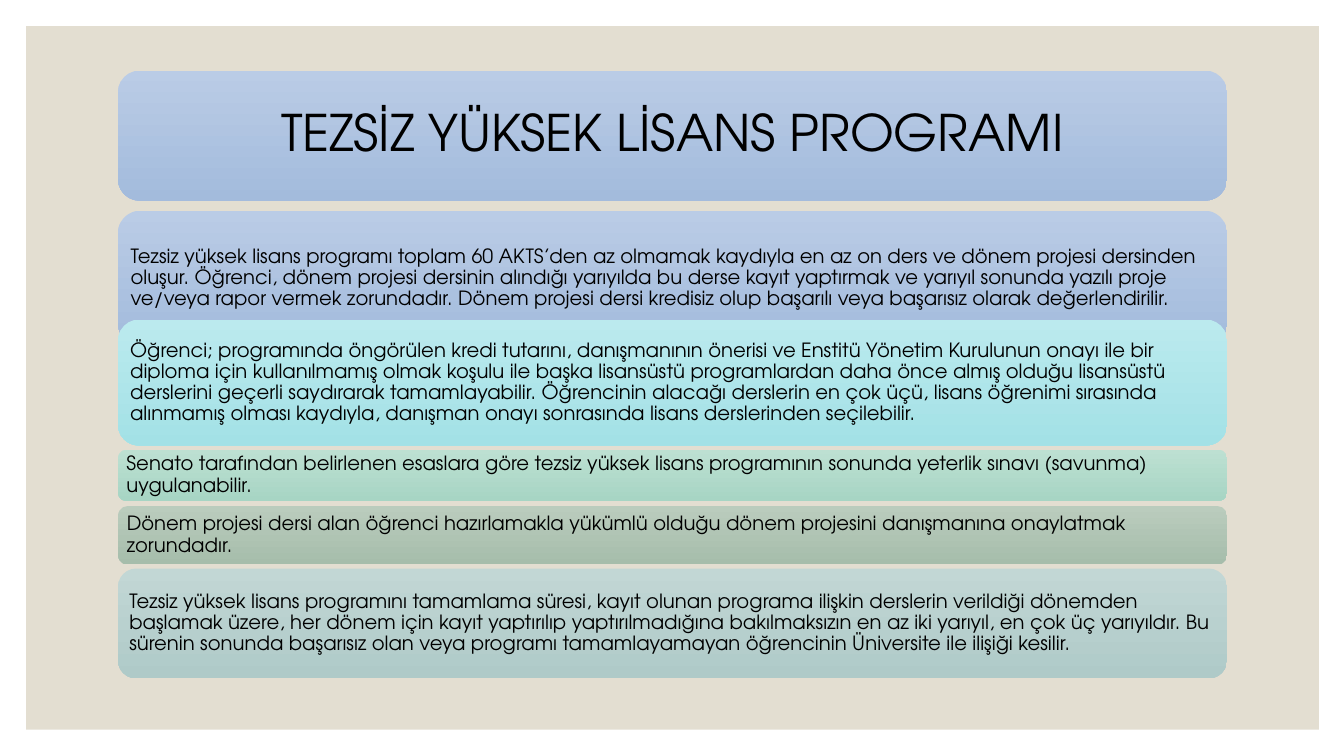
from pptx import Presentation
from pptx.dml.color import RGBColor
from pptx.enum import shapes, text
from pptx.util import Inches, Pt

FONT = "TeX Gyre Adventor"
BLUE = ("BACCE6", "A3BBDC")
TITLE = "TEZSİZ YÜKSEK LİSANS PROGRAMI"

# Body panels: top, height, gradient, text
PANELS = [
    (2.09, 1.34, BLUE,
     "Tezsiz yüksek lisans programı toplam 60 AKTS’den az olmamak kaydıyla en az on ders ve "
     "dönem projesi dersinden oluşur. Öğrenci, dönem projesi dersinin alındığı yarıyılda bu "
     "derse kayıt yaptırmak ve yarıyıl sonunda yazılı proje ve/veya rapor vermek zorundadır. "
     "Dönem projesi dersi kredisiz olup başarılı veya başarısız olarak değerlendirilir."),
    (3.17, 1.25, ("BBEAEE", "A3E1E6"),
     "Öğrenci; programında öngörülen kredi tutarını, danışmanının önerisi ve Enstitü Yönetim "
     "Kurulunun onayı ile bir diploma için kullanılmamış olmak koşulu ile başka lisansüstü "
     "programlardan daha önce almış olduğu lisansüstü derslerini geçerli saydırarak "
     "tamamlayabilir. Öğrencinin alacağı derslerin en çok üçü, lisans öğrenimi sırasında "
     "alınmamış olması kaydıyla, danışman onayı sonrasında lisans derslerinden seçilebilir."),
    (4.46, 0.51, ("BDE0D2", "A7D5C4"),
     "Senato tarafından belirlenen esaslara göre tezsiz yüksek lisans programının sonunda "
     "yeterlik sınavı (savunma) uygulanabilir."),
    (5.02, 0.58, ("BACCBD", "A6BDAB"),
     "Dönem projesi dersi alan öğrenci hazırlamakla yükümlü olduğu dönem projesini "
     "danışmanına onaylatmak zorundadır."),
    (5.64, 1.09, ("C2D7D5", "AFCAC8"),
     "Tezsiz yüksek lisans programını tamamlama süresi, kayıt olunan programa ilişkin "
     "derslerin verildiği dönemden başlamak üzere, her dönem için kayıt yaptırılıp "
     "yaptırılmadığına bakılmaksızın en az iki yarıyıl, en çok üç yarıyıldır. Bu sürenin "
     "sonunda başarısız olan veya programı tamamlayamayan öğrencinin Üniversite ile ilişiği "
     "kesilir."),
]


def rgb(value):
    return RGBColor.from_string(value)


def add_box(s, kind, left, top, width, height):
    sp = s.shapes.add_shape(kind, *map(Inches, (left, top, width, height)))
    sp.shadow.inherit = False
    sp.line.fill.background()
    return sp


def add_panel(s, top, height, colors, words, size=14, inset=0.06,
              align=text.PP_ALIGN.LEFT):
    sp = add_box(s, shapes.MSO_SHAPE.ROUNDED_RECTANGLE, 1.17, top, 11, height)
    # Vertical gradient, light at the top
    sp.fill.gradient()
    sp.fill.gradient_angle = 270
    for stop, color, position in zip(sp.fill.gradient_stops, colors, (0, 1)):
        stop.color.rgb = rgb(color)
        stop.position = position
    # Text
    tf = sp.text_frame
    tf.word_wrap = True
    tf.vertical_anchor = text.MSO_ANCHOR.MIDDLE
    tf.margin_left = tf.margin_right = tf.margin_top = tf.margin_bottom = Inches(inset)
    p = tf.paragraphs[0]
    p.text = words
    p.alignment = align
    p.line_spacing = 0.9
    p.font.name = FONT
    p.font.size = Pt(size)
    p.font.color.rgb = rgb("000000")


def main():
    prs = Presentation()
    prs.slide_width, prs.slide_height = Inches(13.33), Inches(7.5)
    s = prs.slides.add_slide(prs.slide_layouts[6])

    # Beige backdrop
    backdrop = add_box(s, shapes.MSO_SHAPE.RECTANGLE, 0.26, 0.26, 12.82, 6.98)
    backdrop.fill.solid()
    backdrop.fill.fore_color.rgb = rgb("E3DED1")

    # Title and body panels
    add_panel(s, 0.7, 1.29, BLUE, TITLE, 36, 0.15, text.PP_ALIGN.CENTER)
    for panel in PANELS:
        add_panel(s, *panel)

    prs.save("out.pptx")


if __name__ == "__main__":
    main()
